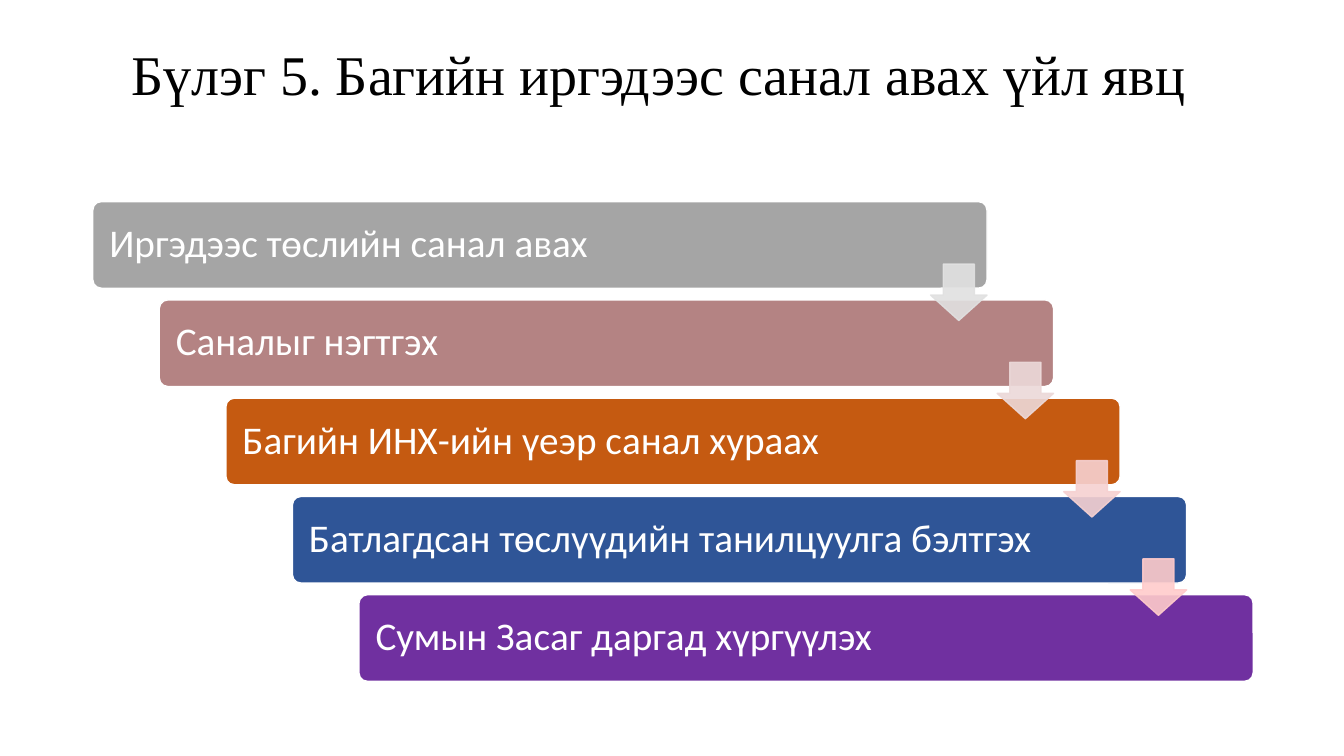
"""Build the slide showing five descending steps for collecting citizens' proposals."""
import dataclasses

import pptx
import pptx.dml.color
import pptx.enum.shapes
import pptx.enum.text
import pptx.oxml
import pptx.oxml.ns
import pptx.util

Inches = pptx.util.Inches
Pt = pptx.util.Pt
SHAPES = pptx.enum.shapes.MSO_SHAPE
ALIGN = pptx.enum.text.PP_ALIGN
WHITE = "FFFFFF"
BAR_LEFT, BAR_TOP, BAR_WIDTH, BAR_HEIGHT = 0.92, 2.0, 8.87, 0.86
STEP_RIGHT, STEP_DOWN = 0.66, 0.975
ARROW_LEFT, ARROW_TOP, ARROW_SIZE = 9.23, 2.62, 0.56


@dataclasses.dataclass
class Step:
    label: str
    fill: str
    arrow: str | None = None


STEPS = [
    Step("Иргэдээс төслийн санал авах", "A5A5A5", "E1E1E1"),
    Step("Саналыг нэгтгэх", "B48383", "ECD9D9"),
    Step("Багийн ИНХ-ийн үеэр санал хураах", "C55A11", "F6D1D1"),
    Step("Батлагдсан төслүүдийн танилцуулга бэлтгэх", "2F5597", "FFCBCB"),
    Step("Сумын Засаг даргад хүргүүлэх", "7030A0"),
]


def paint(color_format, color: str) -> None:
    color_format.rgb = pptx.dml.color.RGBColor.from_string(color)


def write(shape, text: str, font: str, size: float, color: str) -> None:
    frame = shape.text_frame
    frame.word_wrap = True
    frame.auto_size = pptx.enum.text.MSO_AUTO_SIZE.NONE
    frame.vertical_anchor = pptx.enum.text.MSO_ANCHOR.MIDDLE
    para = frame.paragraphs[0]
    para.alignment = ALIGN.LEFT
    para.line_spacing = 0.9
    span = para.add_run()
    span.text = text
    span.font.name = font
    span.font.size = Pt(size)
    paint(span.font.color, color)


def add_figure(page, kind, left: float, top: float, width: float, height: float, fill: str, line: str):
    shape = page.shapes.add_shape(kind, Inches(left), Inches(top), Inches(width), Inches(height))
    shape.shadow.inherit = False
    shape.fill.solid()
    paint(shape.fill.fore_color, fill)
    shape.line.width = Pt(1)
    paint(shape.line.color, line)
    return shape


def add_bar(page, step: Step, index: int) -> None:
    bar = add_figure(page, SHAPES.ROUNDED_RECTANGLE, BAR_LEFT + index * STEP_RIGHT,
                     BAR_TOP + index * STEP_DOWN, BAR_WIDTH, BAR_HEIGHT, step.fill, WHITE)
    bar.adjustments[0] = 0.1
    bar.text_frame.margin_left = Inches(0.14)
    write(bar, step.label, "Calibri", 28, WHITE)


def add_arrow(page, color: str, index: int) -> None:
    arrow = add_figure(page, SHAPES.DOWN_ARROW, ARROW_LEFT + index * STEP_RIGHT,
                       ARROW_TOP + index * STEP_DOWN, ARROW_SIZE, ARROW_SIZE, color, color)
    arrow.adjustments[0] = 0.55
    arrow.adjustments[1] = 0.45
    for tint in arrow.element.spPr.iter(pptx.oxml.ns.qn("a:srgbClr")):
        alpha = pptx.oxml.parse_xml(f'<a:alpha {pptx.oxml.ns.nsdecls("a")} val="90000"/>')
        tint.append(alpha)


def main() -> None:
    deck = pptx.Presentation()
    deck.slide_width, deck.slide_height = Inches(13.33), Inches(7.5)
    page = deck.slides.add_slide(deck.slide_layouts[5])
    title = page.shapes.title
    title.left, title.top = Inches(1.2), Inches(0.31)
    title.width, title.height = Inches(11), Inches(0.92)
    write(title, "Бүлэг 5. Багийн иргэдээс санал авах үйл явц", "Times New Roman", 40, "000000")
    for index, step in enumerate(STEPS):
        add_bar(page, step, index)
    for index, step in enumerate(STEPS):
        if step.arrow:
            add_arrow(page, step.arrow, index)
    deck.save("out.pptx")


if __name__ == "__main__":
    main()
